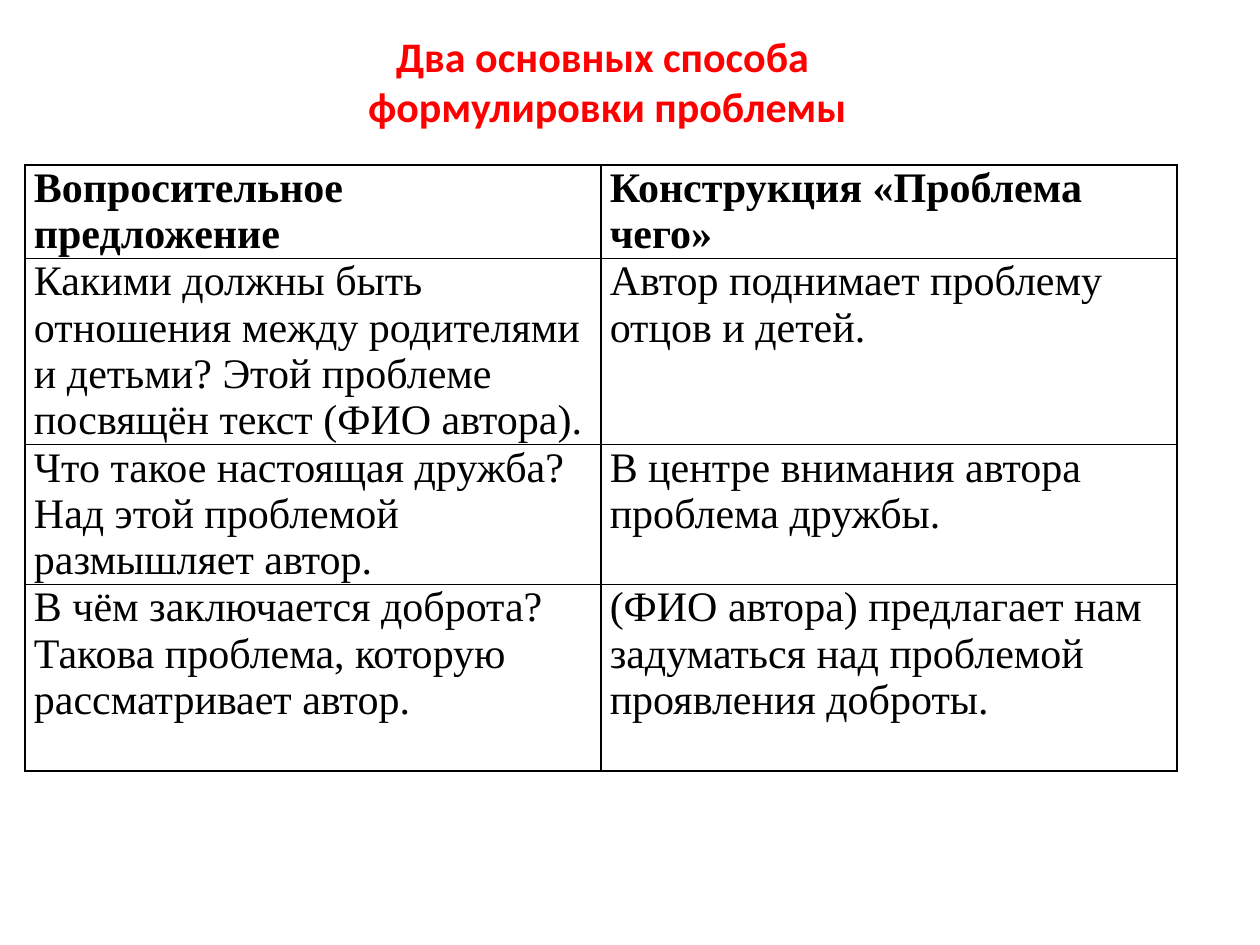
"""Build a slide with a title and a two-column table of ways to state a problem."""
from dataclasses import dataclass

import lxml.etree
import pptx
import pptx.dml.color
import pptx.enum.text
import pptx.oxml.ns
import pptx.util

Inches, Pt = pptx.util.Inches, pptx.util.Pt
RGB = pptx.dml.color.RGBColor
PP_ALIGN = pptx.enum.text.PP_ALIGN
qn = pptx.oxml.ns.qn

COLORS = {"title": "FF0000", "ink": "000000", "paper": "FFFFFF"}
LINE_HEIGHT = 0.37
COL_WIDTH = 4.57


@dataclass
class Row:
    question: str
    construction: str
    lines: int
    bold: bool = False


TITLE = ["Два основных способа ", "формулировки проблемы"]
ROWS = [
    Row("Вопросительное предложение", "Конструкция «Проблема чего»", 2, True),
    Row("Какими должны быть отношения между родителями и детьми? "
        "Этой проблеме посвящён текст (ФИО автора).",
        "Автор поднимает проблему отцов и детей.", 4),
    Row("Что такое настоящая дружба? Над этой проблемой размышляет автор.",
        "В центре внимания автора проблема дружбы.", 3),
    Row("В чём заключается доброта? Такова проблема, которую рассматривает автор.",
        "(ФИО автора) предлагает нам задуматься над проблемой проявления доброты.", 4),
]


def write(p, text: str, *, font: str, color: str, bold: bool = False,
          align=PP_ALIGN.LEFT, size: int = 24, indent: float = 0) -> None:
    p.alignment = align
    if indent:
        p._p.get_or_add_pPr().set("indent", str(Inches(indent)))
    r = p.add_run()
    r.text = text
    r.font.name, r.font.size, r.font.bold = font, Pt(size), bold
    r.font.color.rgb = RGB.from_string(COLORS[color])


def add_borders(cell) -> None:
    tc_pr = cell._tc.get_or_add_tcPr()
    for i, side in enumerate(("a:lnL", "a:lnR", "a:lnT", "a:lnB")):
        ln = lxml.etree.Element(qn(side), w=str(Pt(1)))
        fill = lxml.etree.SubElement(ln, qn("a:solidFill"))
        lxml.etree.SubElement(fill, qn("a:srgbClr"), val=COLORS["ink"])
        tc_pr.insert(i, ln)


def fill_cell(cell, text: str, bold: bool) -> None:
    cell.margin_left = cell.margin_right = Inches(0.07)
    cell.margin_top = cell.margin_bottom = 0
    cell.fill.solid()
    cell.fill.fore_color.rgb = RGB.from_string(COLORS["paper"])
    write(cell.text_frame.paragraphs[0], text, font="Times New Roman",
          color="ink", bold=bold)
    add_borders(cell)


def add_title(slide) -> None:
    sp = slide.shapes.title
    sp.left, sp.top, sp.width, sp.height = map(Inches, (0.67, 0.19, 8.1, 1.31))
    tf = sp.text_frame
    tf.word_wrap = True
    tf.auto_size = pptx.enum.text.MSO_AUTO_SIZE.NONE
    tf.vertical_anchor = pptx.enum.text.MSO_ANCHOR.TOP
    for i, line in enumerate(TITLE):
        p = tf.add_paragraph() if i else tf.paragraphs[0]
        write(p, line, font="Calibri", color="title", bold=True,
              align=PP_ALIGN.CENTER, indent=0.2)


def add_comparison(slide, rows: list[Row]) -> None:
    height = LINE_HEIGHT * sum(row.lines for row in rows)
    table = slide.shapes.add_table(len(rows), 2, Inches(0.2), Inches(1.31),
                                   Inches(2 * COL_WIDTH), Inches(height)).table
    for i, row in enumerate(rows):
        table.rows[i].height = Inches(row.lines * LINE_HEIGHT)
        for j, text in enumerate((row.question, row.construction)):
            fill_cell(table.cell(i, j), text, row.bold)


def main() -> None:
    prs = pptx.Presentation()
    prs.slide_width, prs.slide_height = Inches(10), Inches(7.5)
    slide = prs.slides.add_slide(prs.slide_layouts[5])
    add_title(slide)
    add_comparison(slide, ROWS)
    prs.save("out.pptx")


if __name__ == "__main__":
    main()
